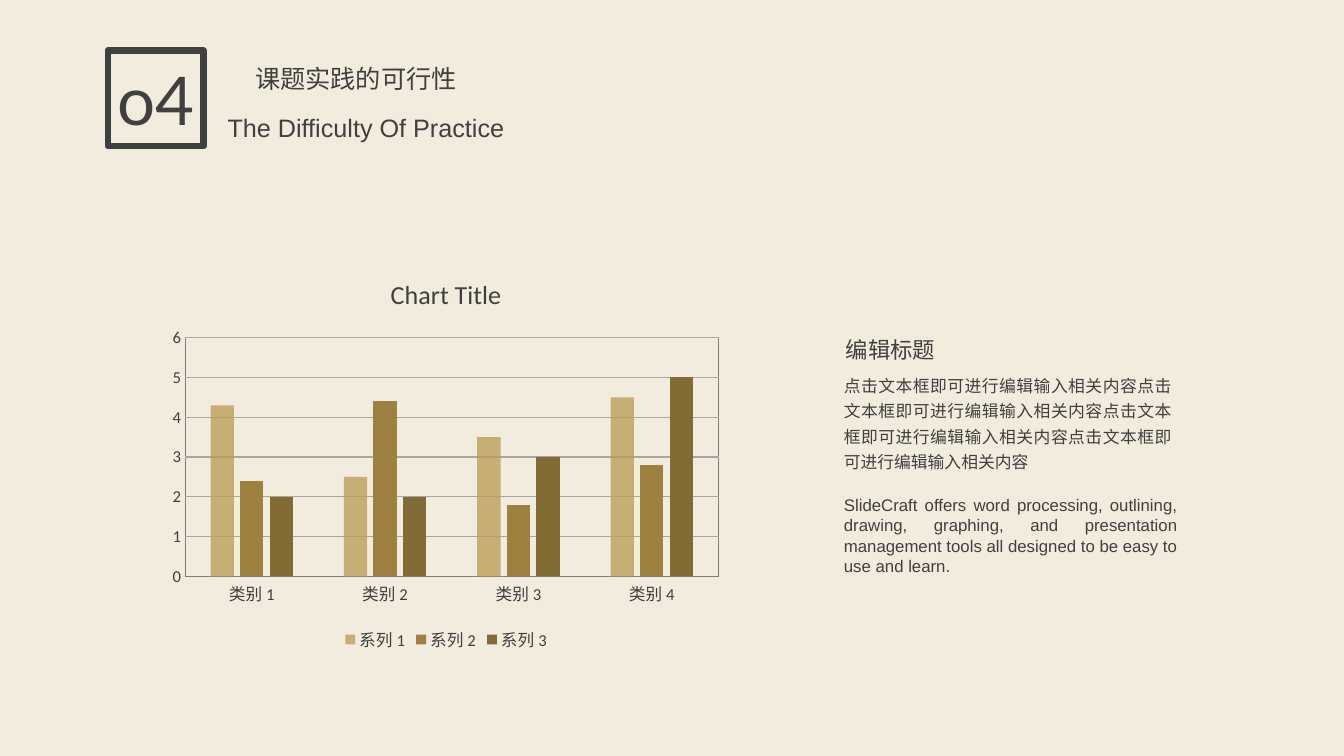
from lxml import etree
from pptx import Presentation
from pptx.chart.data import CategoryChartData
from pptx.dml.color import RGBColor
from pptx.enum.chart import XL_CHART_TYPE as ChartType, XL_LEGEND_POSITION as LegendPosition
from pptx.enum.chart import XL_TICK_MARK as TickMark
from pptx.enum.shapes import MSO_SHAPE as Shape
from pptx.enum.text import MSO_ANCHOR as Anchor, MSO_AUTO_SIZE as AutoSize, PP_ALIGN as Align
from pptx.oxml import parse_xml
from pptx.oxml.ns import nsdecls, qn
from pptx.util import Inches, Pt

COLORS = {
    "background": "F2ECDE", "text": "404040", "axis": "808080", "grid": "A6A6A6",
    "series": ["BC9D58", "9E8140", "836B35"],
}
CHINESE_FONT = "Noto Sans CJK SC"
CATEGORIES = ["类别 1", "类别 2", "类别 3", "类别 4"]
SERIES = {
    "系列 1": (4.3, 2.5, 3.5, 4.5),
    "系列 2": (2.4, 4.4, 1.8, 2.8),
    "系列 3": (2, 2, 3, 5),
}


def rgb(value):
    return RGBColor.from_string(value)


def place(shape, left, top, width, height):
    shape.left, shape.top = Inches(left), Inches(top)
    shape.width, shape.height = Inches(width), Inches(height)


def style_font(font, size, name="Calibri"):
    font.size, font.name = Pt(size), name
    font.color.rgb = rgb(COLORS["text"])


def fill_text(shape, text, size, font_name, align=Align.LEFT, spacing=1.0):
    frame = shape.text_frame
    frame.text = text
    frame.word_wrap = True
    frame.auto_size = AutoSize.SHAPE_TO_FIT_TEXT
    frame.vertical_anchor = Anchor.TOP
    paragraph = frame.paragraphs[0]
    paragraph.alignment, paragraph.line_spacing = align, spacing
    font = paragraph.runs[0].font
    style_font(font, size, font_name)
    # East Asian characters need their own typeface entry
    properties = paragraph.runs[0]._r.get_or_add_rPr()
    etree.SubElement(properties, qn("a:ea"), typeface=font_name)


def add_text(slide, box, *text_style):
    shape = slide.shapes.add_textbox(*(Inches(length) for length in box))
    fill_text(shape, *text_style)
    return shape


def add_heading(slide, left, top):
    # Section number in its frame
    frame = slide.shapes.add_shape(Shape.RECTANGLE, 0, 0, 0, 0)
    place(frame, left, top, 0.95, 0.95)
    frame.shadow.inherit = False
    frame.fill.background()
    frame.line.color.rgb = rgb(COLORS["text"])
    frame.line.width = Pt(4.5)
    add_text(slide, (left - 0.11, top + 0.03, 1.17, 0.91), "o4", 48, "Lato", Align.CENTER)
    # Title and its translation
    title = slide.shapes.title
    place(title, left - 0.25, top + 0.08, 5.42, 0.4)
    fill_text(title, "课题实践的可行性", 18, CHINESE_FONT, Align.CENTER)
    add_text(slide, (left - 0.16, top + 0.57, 5.44, 0.4),
             "The Difficulty Of Practice", 18, "Arial", Align.CENTER)


def add_column_chart(slide, left, top, width, height):
    data = CategoryChartData()
    data.categories = CATEGORIES
    for name, values in SERIES.items():
        data.add_series(name, values)
    box = (Inches(length) for length in (left, top, width, height))
    chart = slide.shapes.add_chart(ChartType.COLUMN_CLUSTERED, *box, data).chart
    style_font(chart.font, 11.9)

    # Title and legend
    chart.has_title = True
    chart.chart_title.text_frame.text = "Chart Title"
    title_font = chart.chart_title.text_frame.paragraphs[0].runs[0].font
    style_font(title_font, 18.6)
    title_font.bold = False
    chart.has_legend = True
    chart.legend.position = LegendPosition.BOTTOM
    chart.legend.include_in_layout = False
    style_font(chart.legend.font, 11.9)

    # Columns
    plot = chart.plots[0]
    plot.gap_width, plot.overlap, plot.vary_by_categories = 219, -27, False
    for series, color in zip(plot.series, COLORS["series"]):
        series.format.fill.solid()
        series.format.fill.fore_color.rgb = rgb(color)
    first_color = plot.series[0]._element.find(".//" + qn("a:srgbClr"))
    etree.SubElement(first_color, qn("a:alpha"), val="78000")

    # Axes and grid
    for axis in (chart.category_axis, chart.value_axis):
        axis.major_tick_mark = axis.minor_tick_mark = TickMark.NONE
        style_font(axis.tick_labels.font, 11.9)
    category_line = chart.category_axis.format.line
    category_line.color.rgb, category_line.width = rgb(COLORS["axis"]), Pt(0.75)
    value_axis = chart.value_axis
    value_axis.minimum_scale, value_axis.maximum_scale, value_axis.major_unit = 0, 6, 1
    value_axis.format.line.fill.background()
    grid_line = value_axis.major_gridlines.format.line
    grid_line.color.rgb, grid_line.width = rgb(COLORS["grid"]), Pt(0.75)

    # Plot area position and border
    plot_area = chart._chartSpace.chart.plotArea
    for layout in plot_area.findall(qn("c:layout")):
        plot_area.remove(layout)
    position = "".join(f'<c:{key} val="{value}"/>' for key, value in (
        ("layoutTarget", "inner"), ("xMode", "edge"), ("yMode", "edge"),
        ("x", 0.04), ("y", 0.2), ("w", 0.94), ("h", 0.6)))
    plot_area.insert(0, parse_xml(
        f'<c:layout {nsdecls("c")}><c:manualLayout>{position}</c:manualLayout></c:layout>'))
    plot_area.append(parse_xml(
        f'<c:spPr {nsdecls("c", "a")}><a:noFill/><a:ln w="{Pt(0.75)}"><a:solidFill>'
        f'<a:srgbClr val="{COLORS["axis"]}"/></a:solidFill></a:ln></c:spPr>'))


def add_description(slide, left, top):
    add_text(slide, (left + 0.02, top, 1.49, 0.37), "编辑标题", 16, CHINESE_FONT)
    add_text(slide, (left, top + 0.34, 3.45, 1.11), "点击文本框即可进行编辑输入相关内容" * 4,
             12, CHINESE_FONT, Align.JUSTIFY, 1.25)
    english = add_text(
        slide, (left + 0.1, top + 1.62, 3.31, 0.81),
        "SlideCraft offers word processing, outlining, drawing, graphing, and "
        "presentation management tools all designed to be easy to use and learn.",
        12, "Arial", Align.JUSTIFY)
    frame = english.text_frame
    frame.margin_left = frame.margin_right = frame.margin_top = frame.margin_bottom = 0


def main():
    presentation = Presentation()
    presentation.slide_width, presentation.slide_height = Inches(13.33), Inches(7.5)
    slide = presentation.slides.add_slide(presentation.slide_layouts[5])
    slide.background.fill.solid()
    slide.background.fill.fore_color.rgb = rgb(COLORS["background"])
    add_heading(slide, 1.07, 0.5)
    add_column_chart(slide, 1.61, 2.56, 5.63, 3.95)
    add_description(slide, 8.27, 3.29)
    presentation.save("out.pptx")


if __name__ == "__main__":
    main()
